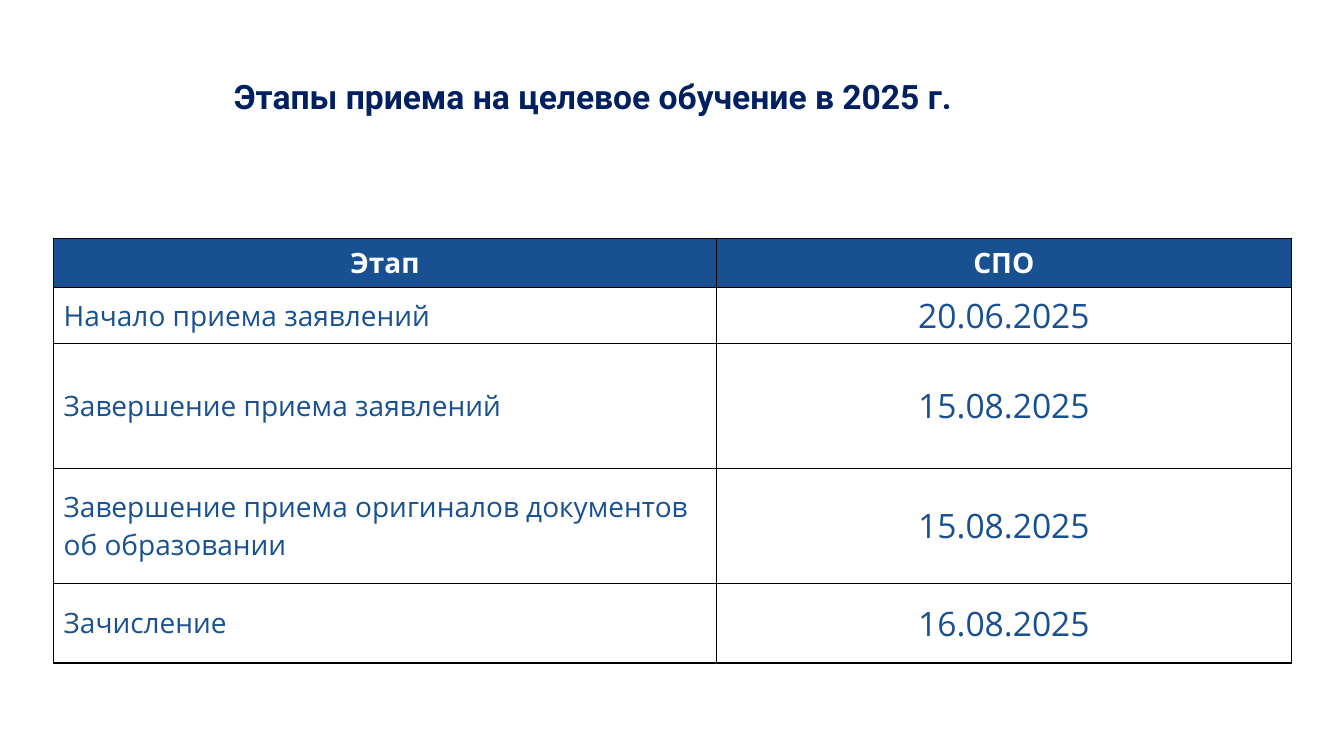
import pptx
import pptx.dml.color
import pptx.enum.text
import pptx.oxml
import pptx.oxml.ns
import pptx.util
from pptx.util import Cm

COLORS = {
    "title": "002060",
    "blue": "195091",
    "white": "FFFFFF",
    "border": "000000",
}
TITLE = "Этапы приема на целевое обучение в 2025 г."
HEADER = ("Этап", "СПО")
STAGES = [
    ("Начало приема заявлений", "20.06.2025"),
    ("Завершение приема заявлений", "15.08.2025"),
    ("Завершение приема оригиналов документов об образовании", "15.08.2025"),
    ("Зачисление", "16.08.2025"),
]
COLUMN_WIDTHS = (16.71, 14.48)
ROW_HEIGHTS = (1.14, 1.32, 3.15, 2.9, 2.01)
ALIGN = pptx.enum.text.PP_ALIGN
ANCHOR = pptx.enum.text.MSO_ANCHOR


def rgb(name):
    return pptx.dml.color.RGBColor.from_string(COLORS[name])


def format_paragraph(paragraph, font_name, size, color, bold, alignment):
    paragraph.alignment = alignment
    font = paragraph.font
    font.name = font_name
    font.size = pptx.util.Pt(size)
    font.bold = bold
    font.color.rgb = rgb(color)


def add_title(slide):
    title = slide.shapes.title
    title.left, title.top = Cm(5.64), Cm(0.33)
    title.width, title.height = Cm(29.21), Cm(4.32)
    frame = title.text_frame
    frame.text = TITLE
    frame.word_wrap = True
    frame.vertical_anchor = ANCHOR.MIDDLE
    paragraph = frame.paragraphs[0]
    paragraph.line_spacing = 0.9
    format_paragraph(paragraph, "Roboto", 24, "title", True, ALIGN.LEFT)


def add_borders(cell):
    properties = cell._tc.get_or_add_tcPr()
    for side in ("lnL", "lnR", "lnT", "lnB"):
        properties.append(pptx.oxml.parse_xml(
            f'<a:{side} {pptx.oxml.ns.nsdecls("a")} w="12700"><a:solidFill>'
            f'<a:srgbClr val="{COLORS["border"]}"/></a:solidFill></a:{side}>'
        ))


def fill_cell(cell, text, size, alignment, is_header):
    cell.text = text
    cell.vertical_anchor = ANCHOR.MIDDLE
    add_borders(cell)
    if is_header:
        cell.fill.solid()
        cell.fill.fore_color.rgb = rgb("blue")
    else:
        cell.fill.background()
    color = "white" if is_header else "blue"
    format_paragraph(cell.text_frame.paragraphs[0], "Open Sans", size, color,
                     is_header, alignment)


def add_stage_table(slide):
    table = slide.shapes.add_table(
        len(ROW_HEIGHTS), len(COLUMN_WIDTHS), Cm(1.35), Cm(6.02),
        Cm(sum(COLUMN_WIDTHS)), Cm(sum(ROW_HEIGHTS)),
    ).table
    table.horz_banding = False
    for column, width in zip(table.columns, COLUMN_WIDTHS):
        column.width = Cm(width)
    for row, height in zip(table.rows, ROW_HEIGHTS):
        row.height = Cm(height)
    for index, text in enumerate(HEADER):
        fill_cell(table.cell(0, index), text, 20, ALIGN.CENTER, True)
    for index, (stage, date) in enumerate(STAGES, start=1):
        fill_cell(table.cell(index, 0), stage, 20, ALIGN.LEFT, False)
        fill_cell(table.cell(index, 1), date, 24, ALIGN.CENTER, False)


def main():
    presentation = pptx.Presentation()
    presentation.slide_width = Cm(33.87)
    presentation.slide_height = Cm(19.05)
    title_only = presentation.slide_layouts[5]
    slide = presentation.slides.add_slide(title_only)
    add_title(slide)
    add_stage_table(slide)
    presentation.save("out.pptx")


if __name__ == "__main__":
    main()
